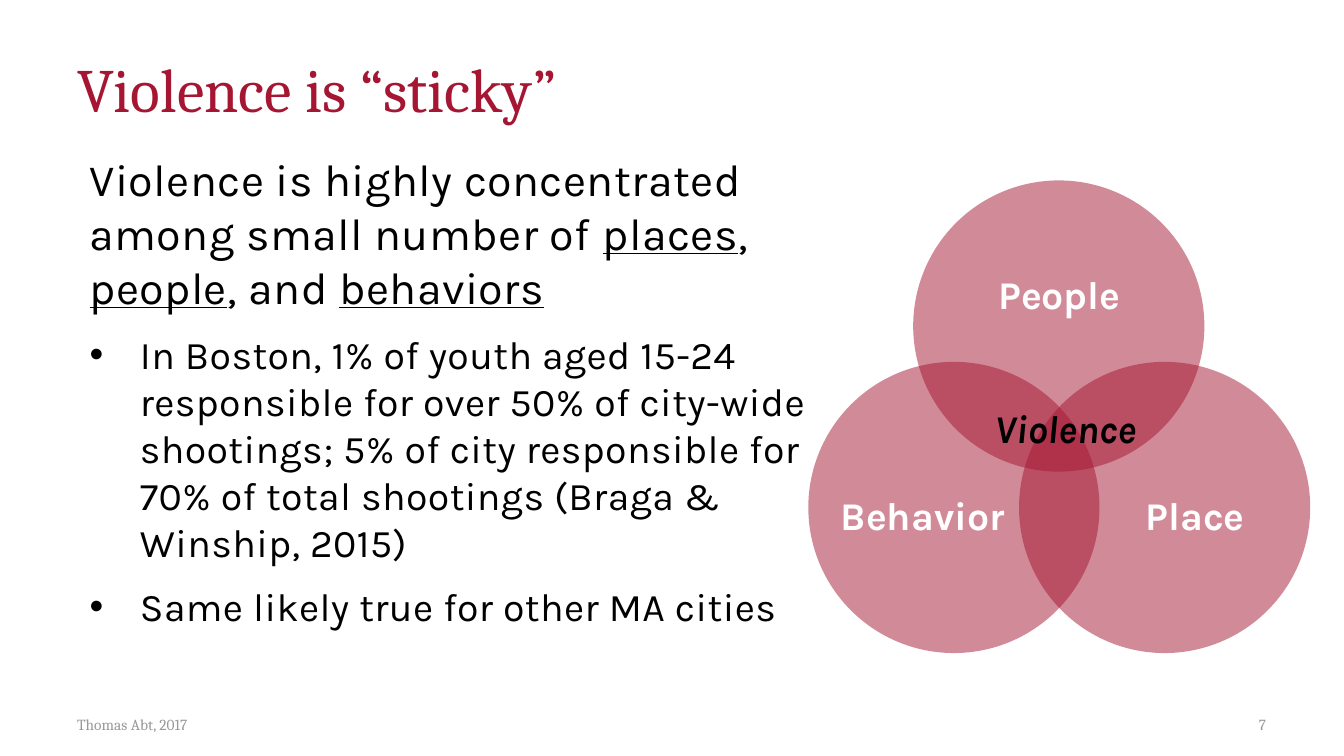
from lxml import etree
from pptx import Presentation
from pptx.dml import color
from pptx.enum import shapes, text
from pptx.oxml import ns
from pptx.util import Pt

CRIMSON, WHITE, BLACK, GREY = "A51632", "FFFFFF", "000000", "999999"
SERIF, SANS = "Cambria", "Karla"
LEFT, CENTER, RIGHT = text.PP_ALIGN.LEFT, text.PP_ALIGN.CENTER, text.PP_ALIGN.RIGHT
TOP, MIDDLE = text.MSO_ANCHOR.TOP, text.MSO_ANCHOR.MIDDLE

INTRO = [("Violence is highly concentrated among small number of ", False),
         ("places", True), (", ", False), ("people", True),
         (", and ", False), ("behaviors", True)]
POINTS = ["In Boston, 1% of youth aged 15-24 responsible for over 50% of city-wide "
          "shootings; 5% of city responsible for\v70% of total shootings (Braga &\v"
          "Winship, 2015)",
          "Same likely true for other MA cities"]

CIRCLE = 208
CIRCLES = [("People", (652.3, 128.9), (680.4, 164.9, 152.6, 93.6)),
           ("Place", (727.9, 258.5), (791.3, 312.5, 124.6, 114.5)),
           ("Behavior", (577.4, 258.5), (596.9, 312.5, 124.6, 114.5))]


def rgb(value):
    """Return the colour for a hex string."""
    return color.RGBColor.from_string(value)


def style(r, size, face, value, bold=False, italic=False):
    """Format one run."""
    r.font.size, r.font.name = Pt(size), face
    r.font.bold, r.font.italic = bold, italic
    r.font.color.rgb = rgb(value)


def add_frame(s, box, anchor=TOP):
    """Add a wrapping text box and return its text frame."""
    tf = s.shapes.add_textbox(*map(Pt, box)).text_frame
    tf.word_wrap = True
    tf.vertical_anchor = anchor
    return tf


def add_label(s, box, words, size, face, value, align=LEFT, anchor=TOP,
              bold=False, italic=False):
    """Add a text box holding one line and return its text frame."""
    tf = add_frame(s, box, anchor)
    tf.text = words
    p = tf.paragraphs[0]
    p.alignment = align
    style(p.runs[0], size, face, value, bold, italic)
    return tf


def add_circle(s, left, top):
    """Add a half-transparent circle of the Venn diagram."""
    sp = s.shapes.add_shape(shapes.MSO_SHAPE.OVAL, *map(Pt, (left, top, CIRCLE, CIRCLE)))
    sp.shadow.inherit = False
    sp.fill.solid()
    sp.fill.fore_color.rgb = rgb(CRIMSON)
    sp.line.fill.background()
    fill = sp.fill._xPr.find(".//" + ns.qn("a:srgbClr"))
    etree.SubElement(fill, ns.qn("a:alpha"), val="50000")


def add_venn(s):
    """Add the three overlapping circles with their labels."""
    for words, corner, box in CIRCLES:
        add_circle(s, *corner)
        tf = add_label(s, box, words, 28, SANS, WHITE, CENTER, MIDDLE, bold=True)
        tf.margin_left = tf.margin_top = tf.margin_right = tf.margin_bottom = 0
        tf.paragraphs[0].line_spacing = 0.9


def format_body(p, size):
    """Format a body paragraph and its runs."""
    p.space_after = Pt(12)
    for r in p.runs:
        style(r, size, SANS, BLACK)
        r.font._element.set("spc", "30")


def add_bullet(p):
    """Give a paragraph a hanging round bullet."""
    pPr = p._p.get_or_add_pPr()
    pPr.set("marL", str(Pt(36)))
    pPr.set("indent", str(-Pt(36)))
    etree.SubElement(pPr, ns.qn("a:buFont"), typeface="Arial")
    etree.SubElement(pPr, ns.qn("a:buChar"), char="•")


def add_body(s):
    """Add the opening statement and the bullet points."""
    tf = add_frame(s, (56.9, 105.1, 590.4, 409.7))
    p = tf.paragraphs[0]
    for words, underlined in INTRO:
        r = p.add_run()
        r.text = words
        r.font.underline = underlined
    format_body(p, 32)
    for words in POINTS:
        p = tf.add_paragraph()
        p.text = words
        format_body(p, 28)
        add_bullet(p)


def main():
    """Build the slide and save it."""
    prs = Presentation()
    prs.slide_width, prs.slide_height = Pt(960), Pt(540)
    s = prs.slides.add_slide(prs.slide_layouts[6])
    add_venn(s)
    add_label(s, (48, 17.3, 864, 91.4), "Violence is “sticky”", 44, SERIF, CRIMSON,
              anchor=MIDDLE)
    add_body(s)
    add_label(s, (48, 507.6, 761, 17.3), "Thomas Abt, 2017", 11, SERIF, GREY)
    add_label(s, (822.2, 507.6, 89.3, 17.3), "7", 11, SERIF, GREY, RIGHT)
    add_label(s, (685.4, 285.1, 151.2, 41), "Violence", 28, SANS, BLACK, CENTER,
              bold=True, italic=True)
    prs.save("out.pptx")


if __name__ == "__main__":
    main()
